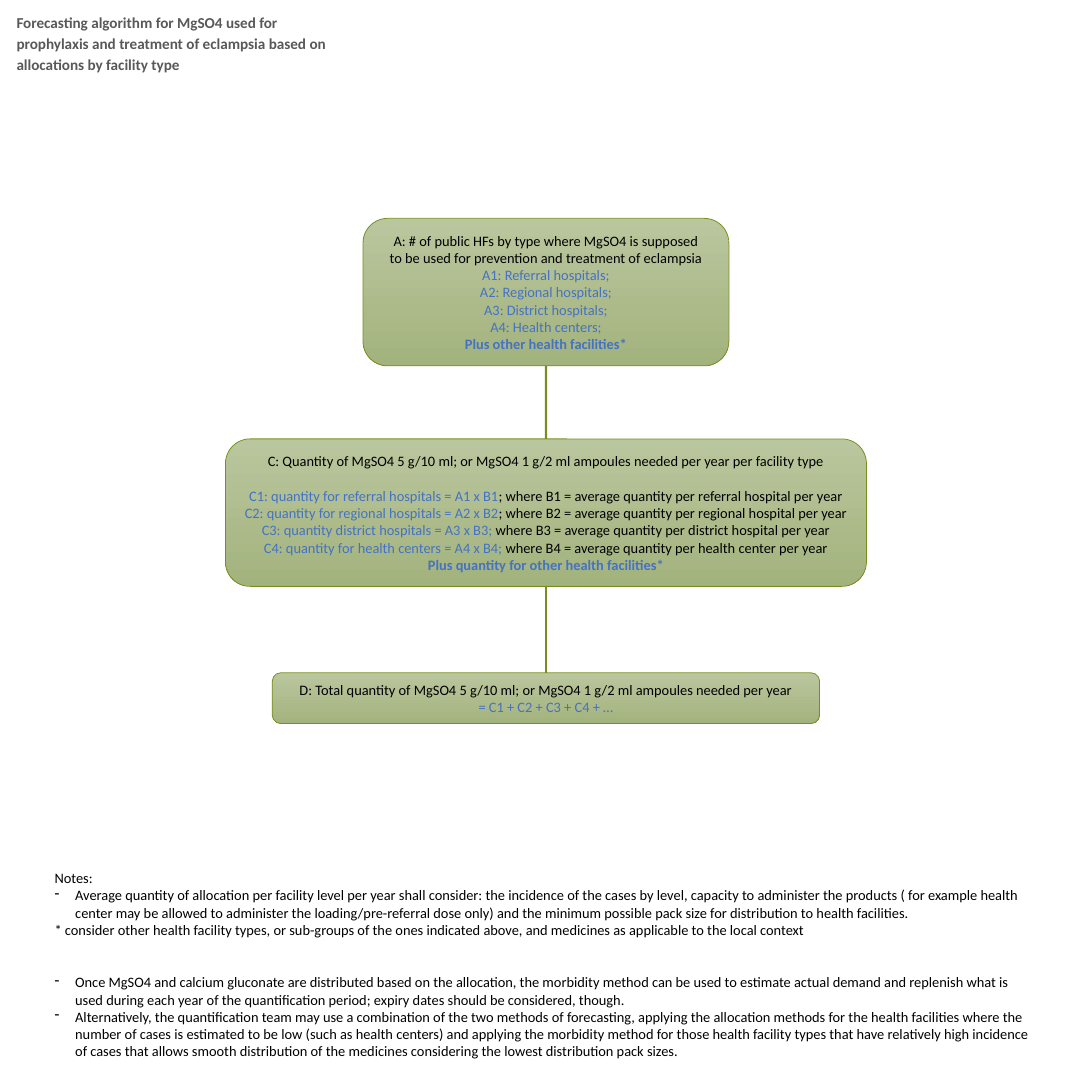
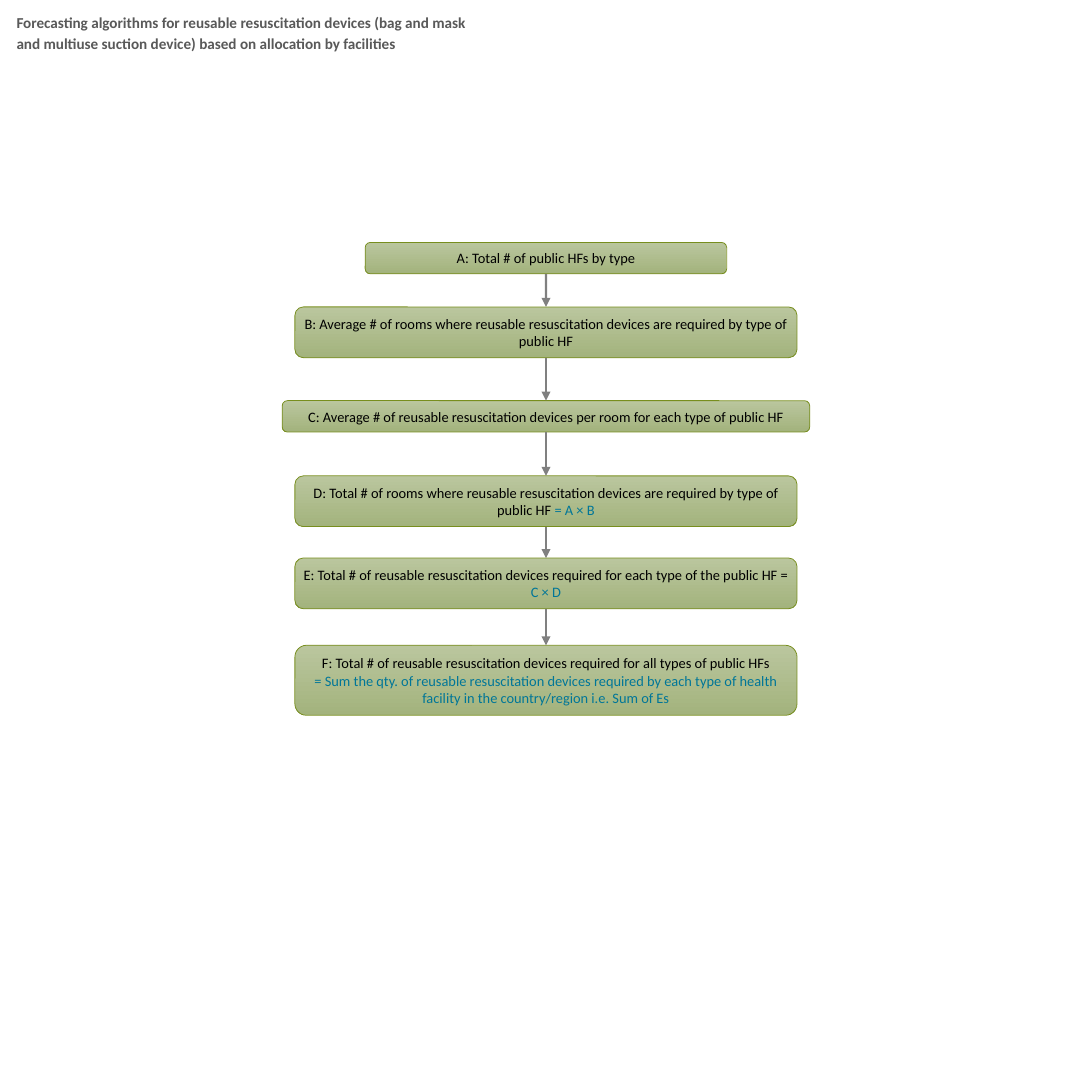
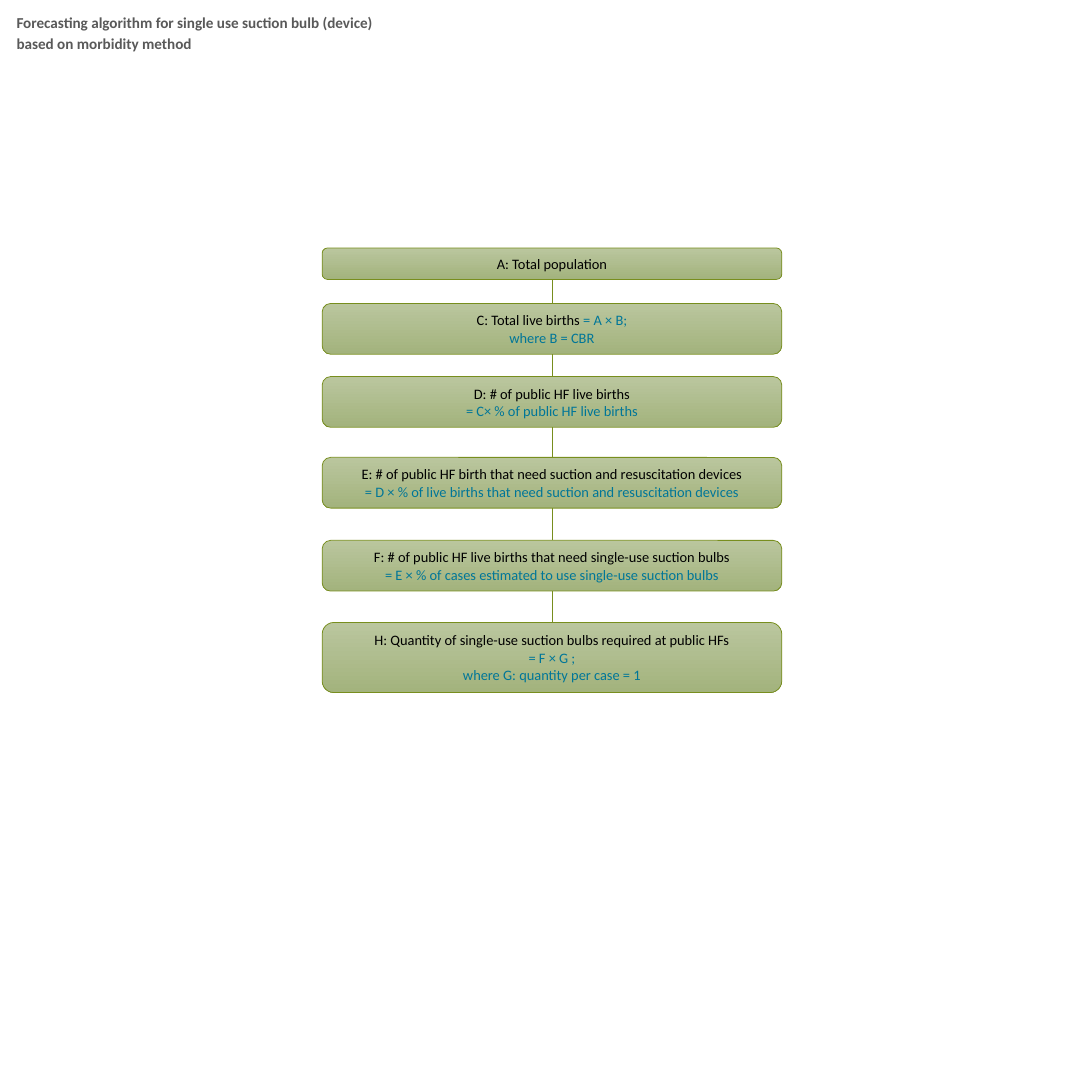
from itertools import pairwise

from lxml import etree
from pptx import Presentation
from pptx.dml.color import RGBColor
from pptx.enum.shapes import MSO_CONNECTOR, MSO_SHAPE
from pptx.enum.text import MSO_ANCHOR, MSO_AUTO_SIZE, PP_ALIGN
from pptx.oxml.ns import qn
from pptx.util import Cm, Pt

ROUND_RECT = MSO_SHAPE.ROUNDED_RECTANGLE
STRAIGHT = MSO_CONNECTOR.STRAIGHT
CENTER, LEFT = PP_ALIGN.CENTER, PP_ALIGN.LEFT
TOP, MIDDLE = MSO_ANCHOR.TOP, MSO_ANCHOR.MIDDLE
NO_FIT = MSO_AUTO_SIZE.NONE
BOTTOM_SITE, TOP_SITE = 2, 0
TITLE_ONLY = 5

COLORS = {
    "black": "000000",
    "title": "595959",
    "blue": "4472C4",
    "teal": "007698",
    "light": "BAC69E",
    "dark": "A3B37D",
    "olive": "788E1E",
    "gray": "808080",
}
FONT = "Calibri"
BODY_SIZE = 9.5
BODY_LINE = 11.6  # height of one body line, in points
SIDE = 25.4
CENTER_X = SIDE / 2


def rgb(name):
    return RGBColor.from_string(COLORS[name])


def set_font(p, size):
    p.font.name = FONT
    p.font.size = Pt(size)


def add_paragraphs(tf, paragraphs, align):
    """Write paragraphs, each a list of (text, colour[, bold]) parts."""
    for i, parts in enumerate(paragraphs):
        p = tf.add_paragraph() if i else tf.paragraphs[0]
        p.alignment = align
        set_font(p, BODY_SIZE)
        for text, color, *bold in parts:
            for j, line in enumerate(text.split("\n")):
                if j:
                    p.add_line_break()
                r = p.add_run()
                r.text = line
                r.font.color.rgb = rgb(color)
                if bold:
                    r.font.bold = True


def add_title_slide(prs, title, width):
    s = prs.slides.add_slide(prs.slide_layouts[TITLE_ONLY])
    sp = s.shapes.title
    sp.left, sp.top, sp.width, sp.height = Cm(0.13), Cm(0.13), Cm(width), Cm(1.7)
    tf = sp.text_frame
    tf.text = title
    tf.word_wrap = True
    tf.auto_size = NO_FIT
    tf.vertical_anchor = TOP
    p = tf.paragraphs[0]
    p.alignment = LEFT
    p.line_spacing = 1.15
    p.space_before, p.space_after = Pt(6), Pt(18)
    set_font(p, 10)
    p.font.bold = True
    p.font.color.rgb = rgb("title")
    return s


def add_box(s, center, top, width, lines, paragraphs):
    """Add a green box whose height follows its number of text lines."""
    height = 0.28 + 0.45 * lines
    sp = s.shapes.add_shape(ROUND_RECT, Cm(center - width / 2), Cm(top),
                            Cm(width), Cm(height))
    sp.shadow.inherit = False
    sp.fill.gradient()
    sp.fill.gradient_angle = 270
    for stop, color in zip(sp.fill.gradient_stops, ("light", "dark")):
        stop.color.rgb = rgb(color)
    sp.line.color.rgb = rgb("olive")
    sp.line.width = Pt(0.5)
    tf = sp.text_frame
    tf.word_wrap = True
    tf.vertical_anchor = MIDDLE
    tf.margin_left = tf.margin_right = tf.margin_top = tf.margin_bottom = Cm(0.13)
    add_paragraphs(tf, paragraphs, CENTER)
    return sp


def connect(s, upper, lower, color, weight, arrow):
    line = s.shapes.add_connector(STRAIGHT, 0, 0, 0, 0)
    line.begin_connect(upper, BOTTOM_SITE)
    line.end_connect(lower, TOP_SITE)
    line.line.color.rgb = rgb(color)
    line.line.width = Pt(weight)
    sp_pr = line._element.spPr
    if arrow:
        etree.SubElement(sp_pr.find(qn("a:ln")), qn("a:tailEnd"), type="triangle")
    etree.SubElement(sp_pr, qn("a:effectLst"))


def add_flow(s, center, boxes, color, weight, arrow=False):
    """Stack boxes (top, width, lines, paragraphs) on one axis and link them."""
    shapes = [add_box(s, center, *box) for box in boxes]
    for upper, lower in pairwise(shapes):
        connect(s, upper, lower, color, weight, arrow)
    return shapes


def add_notes_text(s, left, top, width, height, notes):
    """Write (text, is_bullet) notes below the flow."""
    sp = s.shapes.add_textbox(Cm(left), Cm(top), Cm(width), Cm(height))
    tf = sp.text_frame
    tf.word_wrap = True
    add_paragraphs(tf, [[(text, "black")] for text, _ in notes], LEFT)
    for p, (_, is_bullet) in zip(tf.paragraphs, notes):
        if is_bullet:
            p_pr = p._p.get_or_add_pPr()
            p_pr.set("marL", str(Cm(0.48)))
            p_pr.set("indent", str(-Cm(0.48)))
            bullet = etree.Element(qn("a:buChar"), char="-")
            p_pr.find(qn("a:defRPr")).addprevious(bullet)
    return tf


def build_magnesium(prs):
    s = add_title_slide(
        prs, "Forecasting algorithm for MgSO4 used for prophylaxis and treatment "
        "of eclampsia based on allocations by facility type", 7.72)
    facilities = [
        [("A: # of public HFs by type where MgSO4 is supposed\n"
          "to be used for prevention and treatment of eclampsia", "black")],
        [("A1: Referral hospitals;", "blue")],
        [("A2: Regional hospitals;", "blue")],
        [("A3: District hospitals;", "blue")],
        [("A4: Health centers;", "blue")],
        [("Plus other health facilities*", "blue", True)],
    ]
    quantities = [
        [("C: Quantity of MgSO4 5 g/10 ml; or MgSO4 1 g/2 ml ampoules needed "
          "per year per facility type", "black")],
        [("C1: quantity for referral hospitals = A1 x B1", "blue"),
         ("; where B1 = average quantity per referral hospital per year", "black")],
        [("C2: quantity for regional hospitals = A2 x B2", "blue"),
         ("; where B2 = average quantity per regional hospital per year", "black")],
        [("C3: quantity district hospitals = A3 x B3; ", "blue"),
         ("where B3 = average quantity per district hospital per year", "black")],
        [("C4: quantity for health centers = A4 x B4; ", "blue"),
         ("where B4 = average quantity per health center per year", "black")],
        [("Plus quantity for other health facilities*", "blue", True)],
    ]
    total = [
        [("D: Total quantity of MgSO4 5 g/10 ml; or MgSO4 1 g/2 ml ampoules "
          "needed per year", "black")],
        [("= C1 + C2 + C3 + C4 + …", "blue")],
    ]
    shapes = add_flow(s, CENTER_X, [
        (5.08, 8.51, 7, facilities),
        (10.21, 14.91, 7, quantities),
        (15.65, 12.73, 2, total),
    ], "olive", 1.5)
    shapes[1].text_frame.paragraphs[0].space_after = Pt(BODY_LINE)

    tf = add_notes_text(s, 1.02, 20.09, 23.42, 4.72, [
        ("Notes:", False),
        ("Average quantity of allocation per facility level per year shall "
         "consider: the incidence of the cases by level, capacity to administer "
         "the products ( for example health center may be allowed to administer "
         "the loading/pre-referral dose only) and the minimum possible pack size "
         "for distribution to health facilities.", True),
        ("* consider other health facility types, or sub-groups of the ones "
         "indicated above, and medicines as applicable to the local context", False),
        ("Once MgSO4 and calcium gluconate are distributed based on the "
         "allocation, the morbidity method can be used to estimate actual demand "
         "and replenish what is used during each year of the quantification "
         "period; expiry dates should be considered, though.", True),
        ("Alternatively, the quantification team may use a combination of the two "
         "methods of forecasting, applying the allocation methods for the health "
         "facilities where the number of cases is estimated to be low (such as "
         "health centers) and applying the morbidity method for those health "
         "facility types that have relatively high incidence of cases that allows "
         "smooth distribution of the medicines considering the lowest "
         "distribution pack sizes.", True),
    ])
    tf.paragraphs[2].space_after = Pt(2 * BODY_LINE)


def build_resuscitation(prs):
    s = add_title_slide(
        prs, "Forecasting algorithms for reusable resuscitation devices (bag and "
        "mask and multiuse suction device) based on allocation by facilities", 11.4)
    width = 11.68
    add_flow(s, CENTER_X, [
        (5.64, 8.41, 1, [[("A: Total # of public HFs by type", "black")]]),
        (7.14, width, 2, [
            [("B: Average # of rooms where reusable resuscitation devices are "
              "required by type of public HF", "black")]]),
        (9.32, 12.27, 1, [
            [("C: Average # of reusable resuscitation devices per room for each "
              "type of public HF", "black")]]),
        (11.07, width, 2, [
            [("D: Total # of rooms where reusable resuscitation devices are "
              "required by type of public HF ", "black"), ("= A × B", "teal")]]),
        (12.98, width, 2, [
            [("E: Total # of reusable resuscitation devices required for each "
              "type of the public HF = ", "black"), ("C × D", "teal")]]),
        (15.01, width, 3, [
            [("F: Total # of reusable resuscitation devices required for all "
              "types of public HFs", "black")],
            [("= Sum the qty. of reusable resuscitation devices required by each "
              "type of health facility in the country/region i.e. Sum of Es",
              "teal")]]),
    ], "gray", 1.5, arrow=True)


def build_suction_bulb(prs):
    s = add_title_slide(
        prs, "Forecasting algorithm for single use suction bulb (device) based on "
        "morbidity method", 8.86)
    width = 10.69
    add_flow(s, 12.84, [
        (5.77, width, 1, [[("A: Total population", "black")]]),
        (7.06, width, 2, [
            [("C: Total live births ", "black"), ("= A × B;", "teal")],
            [("where B = CBR", "teal")]]),
        (8.76, width, 2, [
            [("D: # of public HF live births", "black")],
            [("= C× % of public HF live births", "teal")]]),
        (10.64, width, 2, [
            [("E: # of public HF birth that need suction and resuscitation "
              "devices", "black")],
            [("= D × % of live births that need suction and resuscitation "
              "devices", "teal")]]),
        (12.57, width, 2, [
            [("F: # of public HF live births that need single-use suction bulbs",
              "black")],
            [("= E × % of cases estimated to use single-use suction bulbs",
              "teal")]]),
        (14.48, width, 3, [
            [("H: Quantity of single-use suction bulbs required at public HFs",
              "black")],
            [("= F × G ;", "teal")],
            [("where G: quantity per case = 1", "teal")]]),
    ], "olive", 0.5)


def main():
    prs = Presentation()
    prs.slide_width = prs.slide_height = Cm(SIDE)
    build_magnesium(prs)
    build_resuscitation(prs)
    build_suction_bulb(prs)
    prs.save("out.pptx")


if __name__ == "__main__":
    main()
